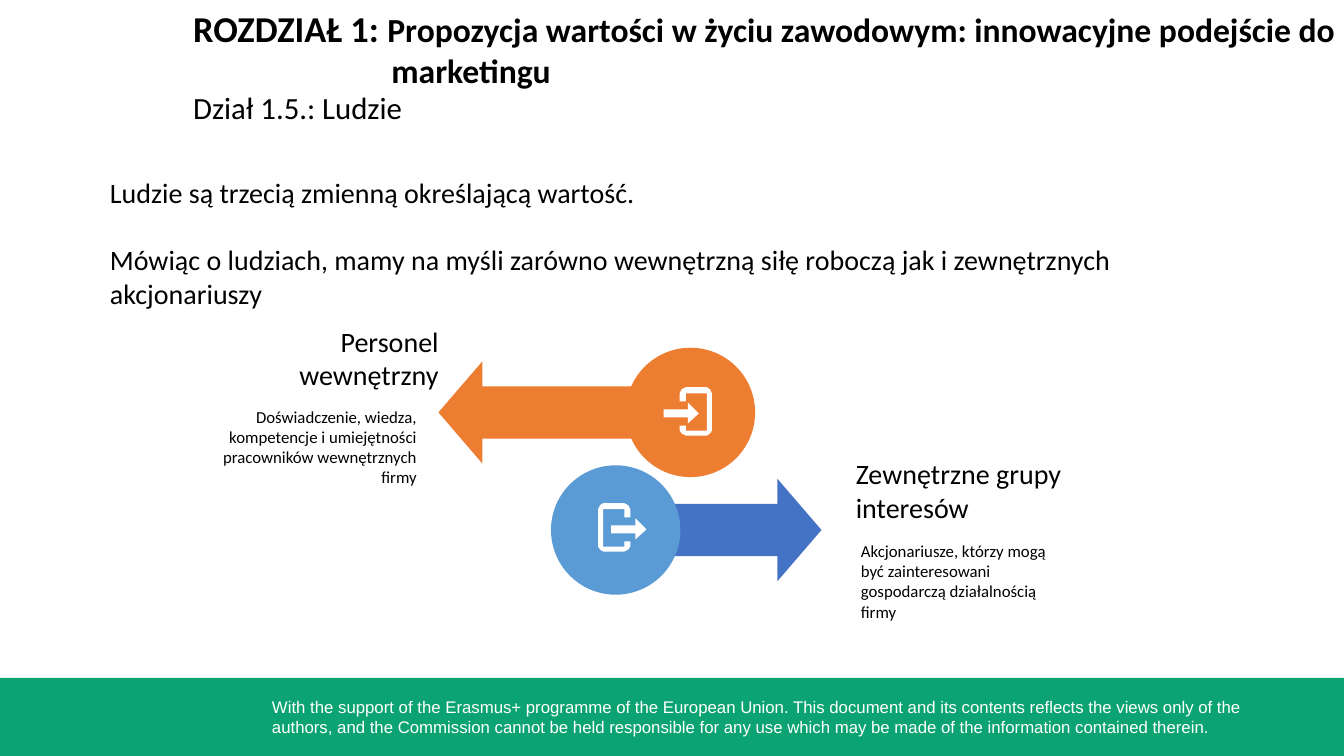
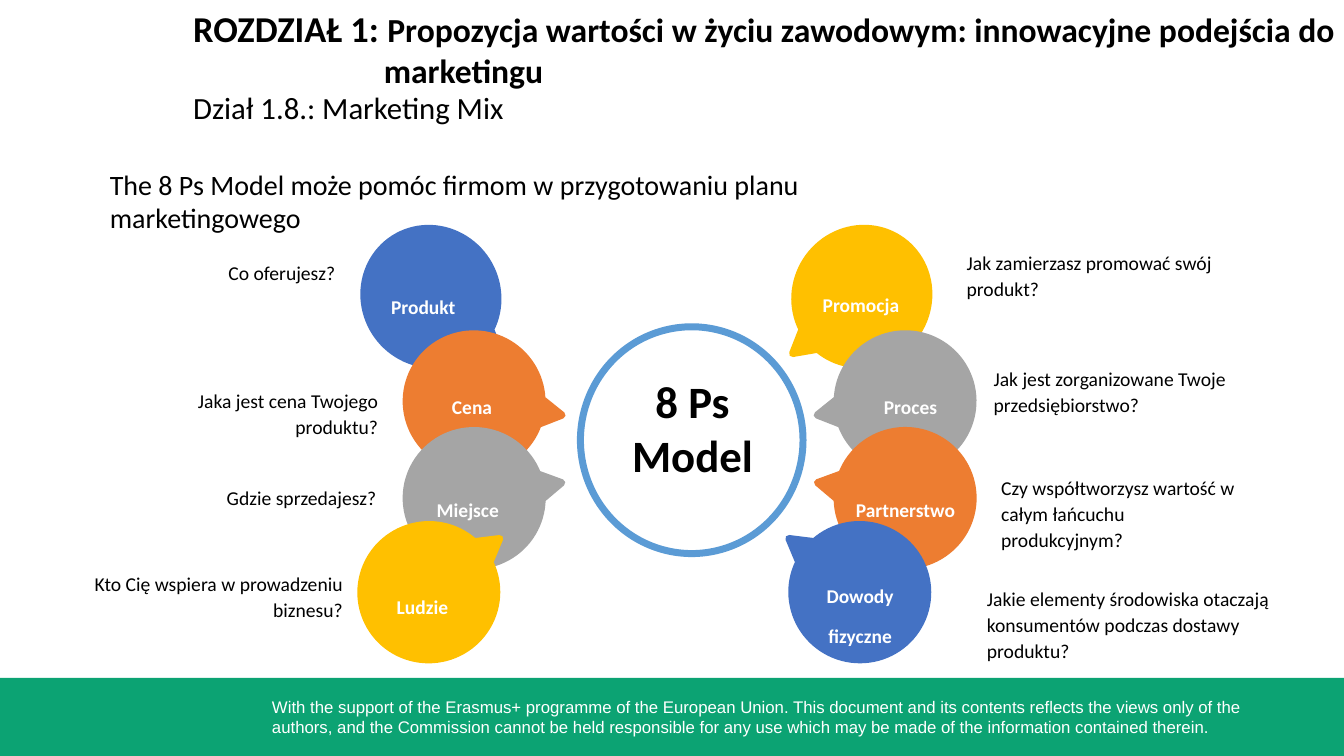
from pptx import Presentation
from pptx.dml.color import RGBColor
from pptx.enum.shapes import MSO_SHAPE
from pptx.enum.text import PP_ALIGN
from pptx.util import Pt

CELL = Pt(6)  # the slide is a grid of 160 columns by 90 rows
COLUMNS, ROWS = 160, 90

BLACK, WHITE, GREEN = "000000", "FFFFFF", "0CA373"
ORANGE, BLUE, SKY, GRAY, YELLOW = "ED7D31", "4472C4", "5B9BD5", "A5A5A5", "FFC000"


def add_figure(slide, kind, box, fill, line=None):
    """Add a preset shape; box is left, top, width, height in grid cells."""
    figure = slide.shapes.add_shape(kind, *(round(n * CELL) for n in box))
    figure.shadow.inherit = False
    figure.fill.solid()
    figure.fill.fore_color.rgb = RGBColor.from_string(fill)
    if line:
        figure.line.color.rgb = RGBColor.from_string(line)
        figure.line.width = Pt(5)
    else:
        figure.line.fill.background()
    return figure


def write(slide, box, lines, size, color=BLACK, font="Calibri", bold=False,
          align=PP_ALIGN.LEFT, spacing=None, gap=0, inset=True):
    """Add a text box with one paragraph a line and return its paragraphs."""
    frame = slide.shapes.add_textbox(*(round(n * CELL) for n in box)).text_frame
    frame.word_wrap = True
    if not inset:
        frame.margin_left = frame.margin_top = frame.margin_right = frame.margin_bottom = 0
    frame.text = "\n".join(lines)
    for index, paragraph in enumerate(frame.paragraphs):
        paragraph.alignment = align
        if spacing:
            paragraph.line_spacing = spacing
        if index and gap:
            paragraph.space_before = Pt(gap)
        paragraph.font.size = Pt(size)
        paragraph.font.name = font
        paragraph.font.bold = bold
        paragraph.font.color.rgb = RGBColor.from_string(color)
    return frame.paragraphs


prs = Presentation()
prs.slide_width, prs.slide_height = COLUMNS * CELL, ROWS * CELL
blank = prs.slide_layouts[6]
people, mix = (prs.slides.add_slide(blank) for _ in range(2))

# Footer band, moved to the layout that both slides share
add_figure(people, MSO_SHAPE.RECTANGLE, (0, 80.7, COLUMNS, 9.3), GREEN)
write(people, (31.2, 82.3, 125, 6), [
    "With the support of the Erasmus+ programme of the European Union. "
    "This document and its contents reflects the views only of the authors, "
    "and the Commission cannot be held responsible for any use which may be made "
    "of the information contained therein."], 12, WHITE, "Arial")
for part in list(people.shapes):
    blank.shapes._spTree.append(part._element)

# Chapter titles
for slide, approach, indent, section in (
    (people, "podejście", 23.6, "Dział 1.5.: Ludzie"),
    (mix, "podejścia", 22.7, "Dział 1.8.: Marketing Mix"),
):
    chapter, ending = write(slide, (23, 0.7, 137, 10.2), ["ROZDZIAŁ 1: ", "marketingu"],
                            24, bold=True, inset=False)
    chapter.runs[0].font.size = Pt(26)
    chapter.add_run().text = (
        f"Propozycja wartości w życiu zawodowym: innowacyjne {approach} do")
    ending._p.get_or_add_pPr().set("marL", str(round(indent * CELL)))
    write(slide, (23, 10.5, 125, 4.7), [section], 22, inset=False)

# Slide 1: people inside and outside the company
write(people, (11.9, 20.3, 134.2, 17.4), [
    "Ludzie są trzecią zmienną określającą wartość.",
    "Mówiąc o ludziach, mamy na myśli zarówno wewnętrzną siłę roboczą "
    "jak i zewnętrznych akcjonariuszy"], 20, gap=24)

for direction, arrow_box, arrow_fill, disc_left, disc_top, disc_fill in (
    (MSO_SHAPE.LEFT_ARROW, (52.2, 43, 26.2, 12.2), ORANGE, 74.5, 41.4, ORANGE),
    (MSO_SHAPE.RIGHT_ARROW, (79.1, 57, 18.7, 12.2), BLUE, 65.6, 55.4, SKY),
):
    arrow = add_figure(people, direction, arrow_box, arrow_fill)
    arrow.adjustments[0], arrow.adjustments[1] = 0.51, 0.43
    add_figure(people, MSO_SHAPE.OVAL, (disc_left, disc_top, 15.4, 15.4), disc_fill)

# Door icons on a 48 by 48 grid; the entrance mirrors the door of the exit
door = [(26, 43), (5, 43), (5, 6), (26, 6), (26, 14), (32, 14), (32, 6), (30, 2),
        (26, 0), (5, 0), (2, 2), (0, 6), (0, 43), (2, 46), (5, 48), (26, 48),
        (30, 46), (32, 43), (32, 38), (26, 38)]
pointer = [(48, 26), (37, 15), (37, 22), (13, 22), (13, 30), (37, 30), (37, 36)]
entrance = [(48 - x, y) for x, y in door], [(x - 13, y) for x, y in pointer]
for (frame, hand), left, top in ((entrance, 79, 46.1), ((door, pointer), 71.2, 59.9)):
    outline = people.shapes.build_freeform(*frame[0], scale=0.12 * CELL)
    outline.add_line_segments(frame[1:])
    outline.move_to(*hand[0])
    outline.add_line_segments(hand[1:])
    icon = outline.convert_to_shape(round(left * CELL), round(top * CELL))
    icon.shadow.inherit = False
    icon.fill.solid()
    icon.fill.fore_color.rgb = RGBColor.from_string(WHITE)
    icon.line.fill.background()

for align, heading, heading_box, detail, detail_box in (
    (PP_ALIGN.RIGHT, "Personel wewnętrzny", (30, 38, 23.4, 10.2),
     "Doświadczenie, wiedza, kompetencje i umiejętności pracowników wewnętrznych firmy",
     (20.8, 47.8, 30, 10.9)),
    (PP_ALIGN.LEFT, "Zewnętrzne grupy interesów", (100.7, 53.8, 37.2, 9.2),
     "Akcjonariusze, którzy mogą być zainteresowani gospodarczą działalnością firmy",
     (101.3, 63.8, 26.8, 10.9)),
):
    write(people, heading_box, [heading], 20, align=align)
    write(people, detail_box, [detail], 12, align=align)

# Slide 2: eight callouts around the model
write(mix, (11.9, 19.3, 92.9, 9.2), [
    "The 8 Ps Model może pomóc firmom w przygotowaniu planu marketingowego"], 20)
add_figure(mix, MSO_SHAPE.OVAL, (69.1, 38.9, 26.5, 27), WHITE, SKY)
write(mix, (74, 43.9, 16.9, 14.2), ["8 Ps", "Model"], 32, bold=True, align=PP_ALIGN.CENTER)

callouts = [((43.4, 27.1, 15.8, 16.4), 32.4), ((48.4, 39.7, 16.1, 16.2), 62.6),
            ((48.4, 51.2, 16.1, 16.2), 81.4), ((43, 62.4, 16.1, 16.2), 108.5)]
# fill, label, its left and top, question, its left, top and width
left_side = [
    (BLUE, "Produkt", 42, 34, "Co oferujesz?", 9.1, 30.2, 32),
    (ORANGE, "Cena", 47.8, 46, "Jaka jest cena Twojego produktu?", 14.2, 45.4, 32),
    (GRAY, "Miejsce", 47.3, 58.2, "Gdzie sprzedajesz?", 14, 57, 32),
    (YELLOW, "Ludzie", 41.9, 69.8, "Kto Cię wspiera w prowadzeniu biznesu?", 10, 67.2, 32),
]
right_side = [
    (YELLOW, "Promocja", 94.1, 33.8, "Jak zamierzasz promować swój produkt?", 113.9, 29, 32),
    (GRAY, "Proces", 100, 46, "Jak jest zorganizowane Twoje przedsiębiorstwo?",
     117.1, 42.8, 32),
    (ORANGE, "Partnerstwo", 99.4, 58.2,
     "Czy współtworzysz wartość w całym łańcuchu produkcyjnym?", 118, 55.8, 32),
    (BLUE, "Dowody fizyczne", 94, 68.4,
     "Jakie elementy środowiska otaczają konsumentów podczas dostawy produktu?",
     116.3, 69, 39),
]
for topics, shift, turn, align in ((left_side, 0, -1, PP_ALIGN.RIGHT),
                                   (right_side, 51.3, 1, PP_ALIGN.LEFT)):
    for ((left, top, width, height), angle), (fill, *_) in zip(callouts, topics):
        bubble = add_figure(mix, MSO_SHAPE.OVAL_CALLOUT,
                            (left + shift, top, width, height), fill, fill)
        bubble.rotation = turn * angle % 360
        bubble.adjustments[0], bubble.adjustments[1] = -0.21 * turn, 0.62
    for _, label, label_left, label_top, question, left, top, width in topics:
        caption, = write(mix, (label_left, label_top, 16.8, 4.4 * len(label.split())),
                         [label], 24, WHITE, bold=True, align=PP_ALIGN.CENTER)
        caption.runs[0]._r.get_or_add_rPr().set("baseline", "30000")
        write(mix, (left, top, width, 7), [question], 14, align=align, spacing=1.1)

prs.save("out.pptx")
